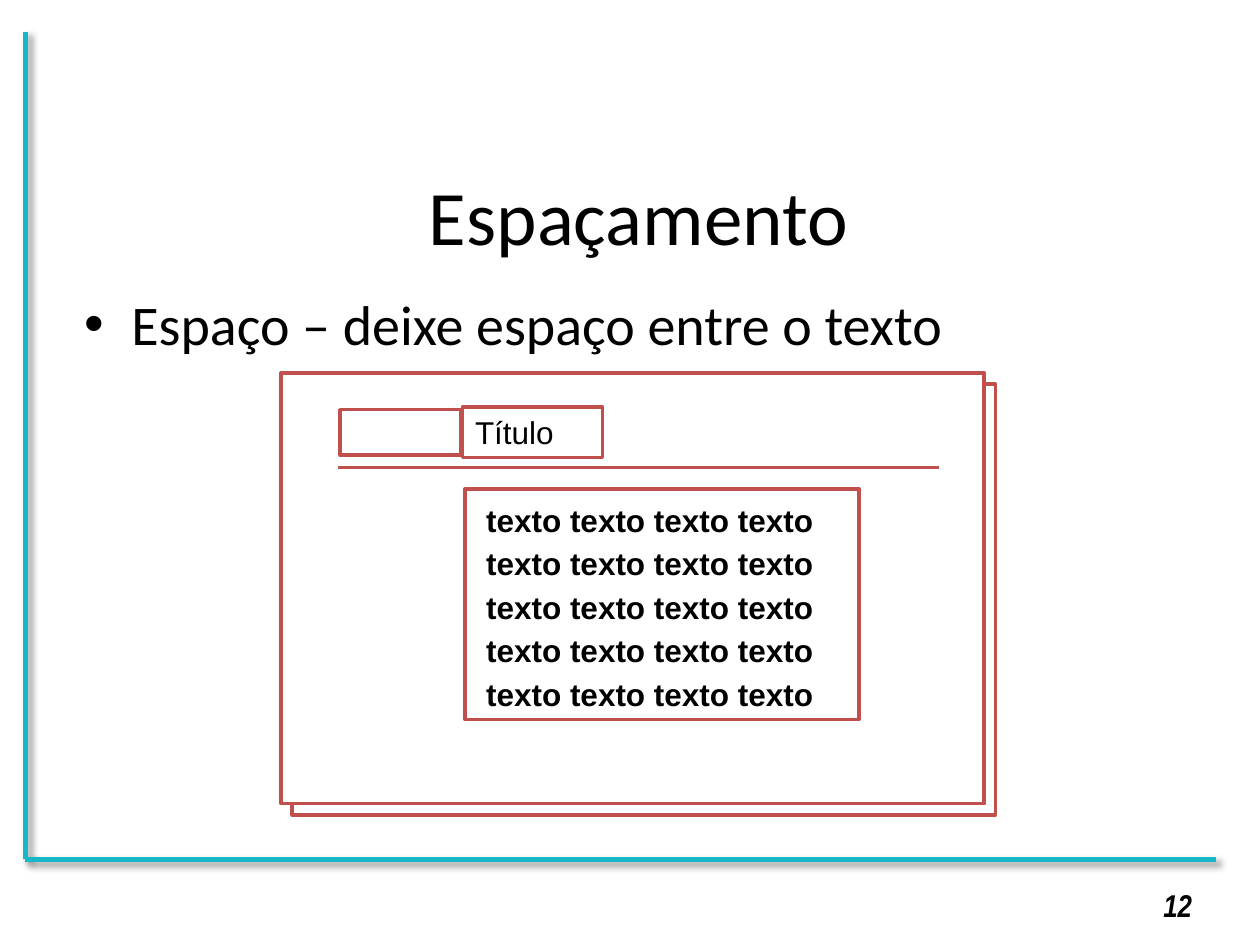
from lxml import etree
from pptx import Presentation
from pptx.dml.color import RGBColor
from pptx.enum import shapes, text
from pptx.oxml import parse_xml
from pptx.oxml.ns import nsdecls, qn
from pptx.util import Pt

BLACK = RGBColor(0, 0, 0)
WHITE = RGBColor(255, 255, 255)
TEAL = RGBColor(0x16, 0xB7, 0xC8)
RED = RGBColor(0xC0, 0x50, 0x4D)

LINE_SHADOW = (
    f'<a:effectLst {nsdecls("a")}>'
    '<a:outerShdw blurRad="50800" dist="38100" dir="2700000" algn="tl" rotWithShape="0">'
    '<a:srgbClr val="000000"><a:alpha val="40000"/></a:srgbClr>'
    '</a:outerShdw></a:effectLst>'
)


def add_bullet(p, indent):
    pPr = p._p.get_or_add_pPr()
    pPr.set("marL", str(Pt(indent)))
    pPr.set("indent", str(-Pt(indent)))
    etree.SubElement(pPr, qn("a:buFont")).set("typeface", "Arial")
    etree.SubElement(pPr, qn("a:buChar")).set("char", "•")


def write(sp, lines, size, font, bold=False, italic=False, align=text.PP_ALIGN.LEFT,
          anchor=text.MSO_ANCHOR.TOP, spacing=None, bullet_indent=None, left=7.2):
    tf = sp.text_frame
    tf.word_wrap = True
    tf.vertical_anchor = anchor
    tf.margin_left, tf.margin_right = Pt(left), Pt(7.2)
    tf.margin_top = tf.margin_bottom = Pt(3.6)
    for i, line in enumerate(lines):
        p = tf.add_paragraph() if i else tf.paragraphs[0]
        p.alignment = align
        if spacing:
            p.line_spacing = spacing
        if bullet_indent:
            add_bullet(p, bullet_indent)
        r = p.add_run()
        r.text = line
        f = r.font
        f.name, f.size, f.bold, f.italic = font, Pt(size), bold, italic
        f.color.rgb = BLACK


def add_text(s, box, lines, **fmt):
    write(s.shapes.add_textbox(*map(Pt, box)), lines, **fmt)


def add_line(parent, start, end, color, width, shadow=False):
    line = parent.shapes.add_connector(
        shapes.MSO_CONNECTOR.STRAIGHT, *map(Pt, (*start, *end)))
    line.line.color.rgb = color
    line.line.width = Pt(width)
    effects = LINE_SHADOW if shadow else f'<a:effectLst {nsdecls("a")}/>'
    line._element.spPr.append(parse_xml(effects))


def add_panel(parent, x, y, w, h):
    sp = parent.shapes.add_shape(shapes.MSO_SHAPE.RECTANGLE, *map(Pt, (x, y, w, h)))
    sp.shadow.inherit = False
    sp.fill.solid()
    sp.fill.fore_color.rgb = WHITE
    sp.line.color.rgb = RED
    sp.line.width = Pt(2)
    return sp


def add_frame(s, x, y, w, h):
    """Teal lines along the left and bottom edges of the box."""
    corner = (x, y + h)
    add_line(s, corner, (x, y), TEAL, 3, shadow=True)
    add_line(s, corner, (x + w, y + h), TEAL, 3, shadow=True)


def add_page_sketch(s, x, y, w, h):
    """Two stacked pages, the front one holding a heading and a text block."""
    g = s.shapes.add_group_shape()
    offset = 6.4
    add_panel(g, x + offset, y + offset, w, h)
    add_panel(g, x, y, w, h)
    add_line(g, (x + 32.5, y + 54), (x + 376, y + 54), RED, 2)
    add_panel(g, x + 33.8, y + 21, 69.2, 26)
    heading = add_panel(g, x + 103.8, y + 19.5, 80, 28.8)
    write(heading, ["Título"], size=18, font="Arial")
    block = add_panel(g, x + 105, y + 66.4, 225.4, 131.6)
    write(block, ["texto texto texto texto"] * 5, size=18, font="Arial", bold=True,
          spacing=1.15, left=12.2)


def main():
    prs = Presentation()
    prs.slide_width, prs.slide_height = Pt(720), Pt(540)
    s = prs.slides.add_slide(prs.slide_layouts[6])
    add_frame(s, 14.4, 18, 680.4, 473)
    add_text(s, (524, 502.6, 164.2, 28.8), ["12"], size=18, font="Arial Narrow",
             bold=True, italic=True, align=text.PP_ALIGN.RIGHT)
    add_text(s, (41, 162, 648, 317.5), ["Espaço – deixe espaço entre o texto"],
             size=32, font="Calibri", bullet_indent=27)
    add_text(s, (41, 88.6, 648, 67.7), ["Espaçamento"], size=44, font="Calibri",
             align=text.PP_ALIGN.CENTER, anchor=text.MSO_ANCHOR.MIDDLE)
    add_page_sketch(s, 160.6, 213.1, 401.8, 246.2)
    prs.save("out.pptx")


if __name__ == "__main__":
    main()
